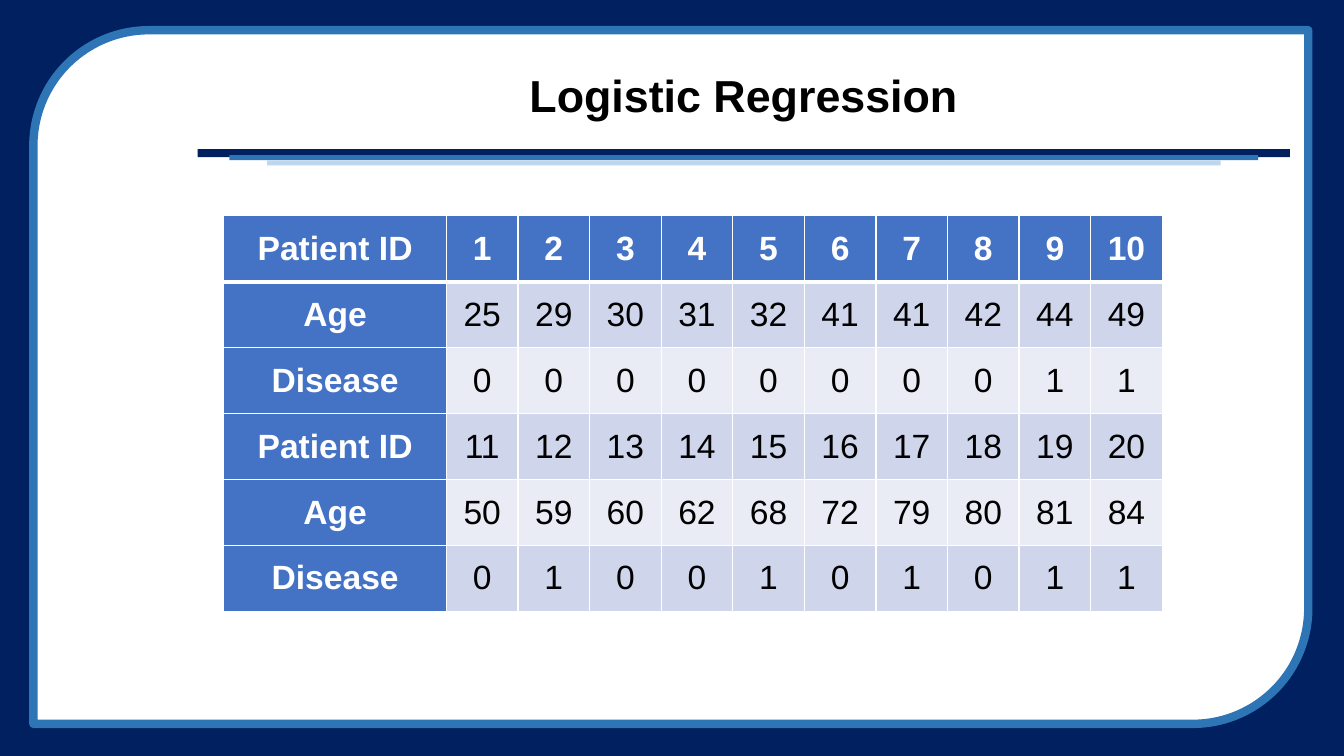
import lxml.etree
import pptx
import pptx.dml.color
import pptx.enum.shapes
import pptx.enum.text
import pptx.oxml.ns
import pptx.util

Cm = pptx.util.Cm
Pt = pptx.util.Pt
RGB = pptx.dml.color.RGBColor
SHAPE = pptx.enum.shapes.MSO_SHAPE

NAVY = RGB(0x00, 0x20, 0x60)
BLUE = RGB(0x2E, 0x75, 0xB6)
PALE = RGB(0xBD, 0xD7, 0xEE)
HEAD = RGB(0x44, 0x72, 0xC4)
BANDS = (RGB(0xE9, 0xEB, 0xF5), RGB(0xCF, 0xD5, 0xEA))
WHITE = RGB(0xFF, 0xFF, 0xFF)
BLACK = RGB(0x00, 0x00, 0x00)

ROWS = [
    ["Patient ID", *range(1, 11)],
    ["Age", 25, 29, 30, 31, 32, 41, 41, 42, 44, 49],
    ["Disease", 0, 0, 0, 0, 0, 0, 0, 0, 1, 1],
    ["Patient ID", *range(11, 21)],
    ["Age", 50, 59, 60, 62, 68, 72, 79, 80, 81, 84],
    ["Disease", 0, 1, 0, 0, 1, 0, 1, 0, 1, 1],
]


def write(frame, text, size=24, color=BLACK, bold=False, space=1.0):
    frame.text = text
    para = frame.paragraphs[0]
    para.alignment = pptx.enum.text.PP_ALIGN.CENTER
    para.line_spacing = space
    font = para.runs[0].font
    font.name = "Arial"
    font.size = Pt(size)
    font.bold = bold
    font.color.rgb = color


def block(slide, kind, box, fill, edge=None):
    shape = slide.shapes.add_shape(kind, *box)
    shape.shadow.inherit = False
    shape.fill.solid()
    shape.fill.fore_color.rgb = fill
    if edge is None:
        shape.line.fill.background()
    else:
        shape.line.color.rgb = edge
        shape.line.width = Pt(6)
    return shape


def frame(slide, left, top, width, height):
    block(slide, SHAPE.RECTANGLE, (left, top, width, height), NAVY)
    box = (left + Cm(0.84), top + Cm(0.76), width - Cm(1.74), height - Cm(1.57))
    panel = block(slide, SHAPE.ROUND_2_DIAG_RECTANGLE, box, WHITE, BLUE)
    panel.rotation = 180


def header(slide, text, left, top, width, height):
    bars = ((0, 2.52, 0.2, NAVY), (0.8, 2.67, 0.13, BLUE), (1.75, 2.8, 0.13, PALE))
    for inset, drop, thick, color in bars:
        box = (left + Cm(inset), top + Cm(drop), width - 2 * Cm(inset), Cm(thick))
        block(slide, SHAPE.RECTANGLE, box, color)
    title = slide.shapes.title
    title.element.getparent().append(title.element)
    title.left, title.top, title.width, title.height = left, top, width, height
    title.text_frame.auto_size = pptx.enum.text.MSO_AUTO_SIZE.NONE
    title.text_frame.vertical_anchor = pptx.enum.text.MSO_ANCHOR.MIDDLE
    write(title.text_frame, text, size=32, bold=True, space=0.9)


def border(cell, row):
    props = cell._tc.get_or_add_tcPr()
    thick = {"T": 3 if row == 1 else 1, "B": 3 if row == 0 else 1}
    for spot, side in enumerate("LRTB"):
        width = str(Pt(thick.get(side, 1)))
        line = lxml.etree.Element(pptx.oxml.ns.qn("a:ln" + side), w=width)
        fill = lxml.etree.SubElement(line, pptx.oxml.ns.qn("a:solidFill"))
        lxml.etree.SubElement(fill, pptx.oxml.ns.qn("a:srgbClr"), val=str(WHITE))
        props.insert(spot, line)


def grid(slide, rows, left, top, width, height):
    count = len(rows[0])
    table = slide.shapes.add_table(len(rows), count, left, top, width, height).table
    first = Cm(5.61)
    for col, column in enumerate(table.columns):
        column.width = first if col == 0 else round((width - first) / (count - 1))
    for row, values in enumerate(rows):
        table.rows[row].height = round(height / len(rows))
        for col, value in enumerate(values):
            cell = table.cell(row, col)
            head = row == 0 or col == 0
            cell.margin_left = cell.margin_right = Cm(0.18)
            cell.margin_top = cell.margin_bottom = 0
            cell.vertical_anchor = pptx.enum.text.MSO_ANCHOR.MIDDLE
            cell.fill.solid()
            cell.fill.fore_color.rgb = HEAD if head else BANDS[row % 2]
            color = WHITE if head else BLACK
            write(cell.text_frame, str(value), color=color, bold=head)
            border(cell, row)


def main():
    deck = pptx.Presentation()
    deck.slide_width, deck.slide_height = Cm(33.87), Cm(19.05)
    slide = deck.slides.add_slide(deck.slide_layouts[5])
    frame(slide, 0, 0, deck.slide_width, deck.slide_height)
    header(slide, "Logistic Regression", Cm(4.98), Cm(1.24), Cm(27.53), Cm(2.46))
    grid(slide, ROWS, Cm(5.64), Cm(5.44), Cm(23.65), Cm(9.96))
    deck.save("out.pptx")


if __name__ == "__main__":
    main()
